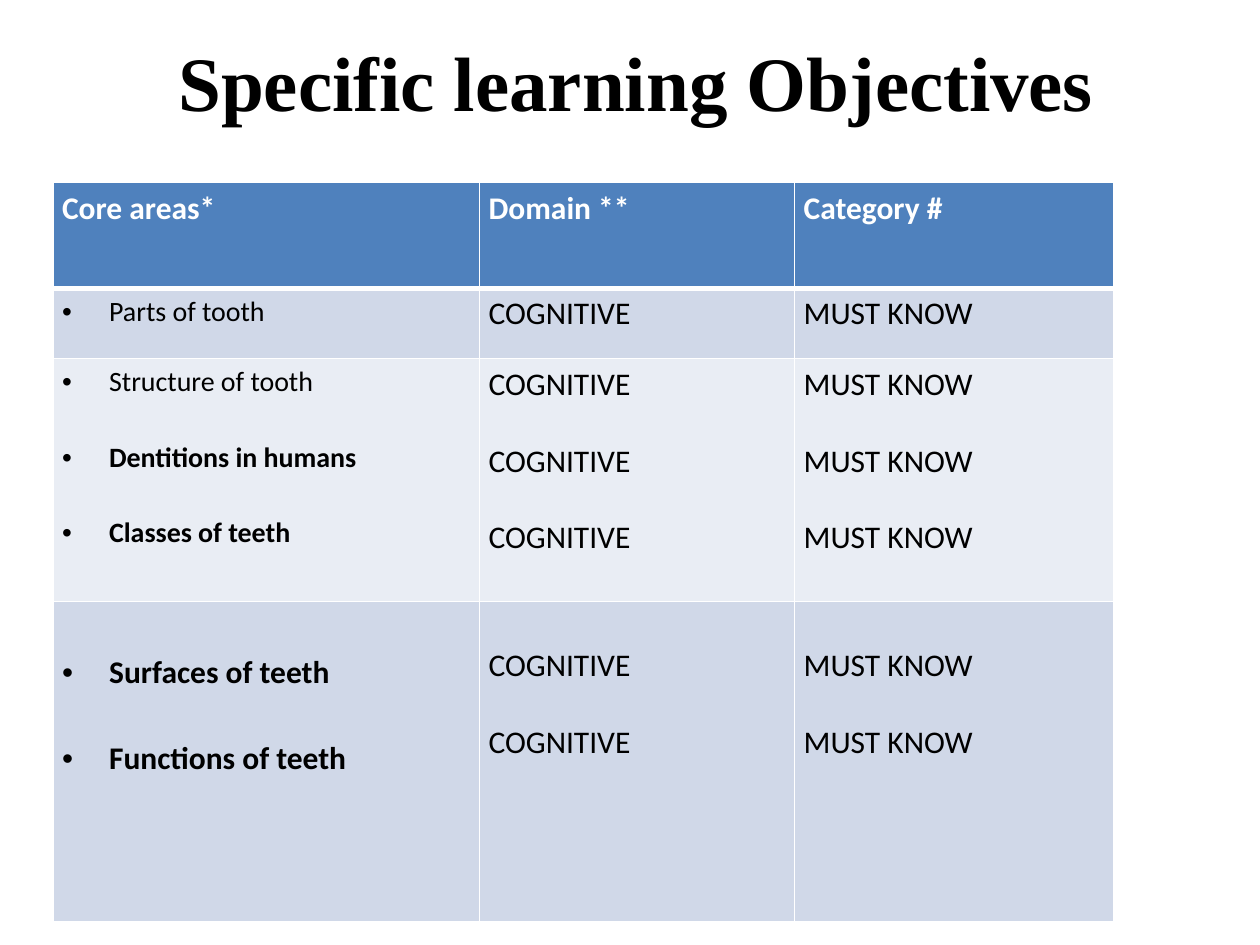
from lxml.etree import SubElement
from pptx import Presentation
from pptx.dml.color import RGBColor
from pptx.enum.text import MSO_ANCHOR as Anchor, PP_ALIGN as Align
from pptx.oxml.ns import qn
from pptx.util import Cm, Pt

COLORS = {"header": "4F81BD", "odd": "D0D8E8", "even": "E9EDF4",
          "white": "FFFFFF", "black": "000000"}


def set_border(cell, side, width):
    """Draw a white line of the given width on side L, R, T or B."""
    line = SubElement(cell._tc.get_or_add_tcPr(), qn(f"a:ln{side}"), w=str(Pt(width)))
    fill = SubElement(line, qn("a:solidFill"))
    SubElement(fill, qn("a:srgbClr"), val=COLORS["white"])


def format_font(font, name, size, bold, color):
    font.name, font.size, font.bold = name, Pt(size), bold
    font.color.rgb = RGBColor.from_string(COLORS[color])


presentation = Presentation()
presentation.slide_width, presentation.slide_height = Cm(25.4), Cm(19.05)
slide = presentation.slides.add_slide(presentation.slide_layouts[6])

# Title
title = slide.shapes.add_textbox(Cm(3.18), Cm(0.1), Cm(19.3), Cm(3.07))
title_frame = title.text_frame
title_frame.word_wrap = True
title_frame.vertical_anchor = Anchor.MIDDLE
title_frame.text = "Specific learning Objectives"
title_paragraph = title_frame.paragraphs[0]
title_paragraph.alignment = Align.CENTER
format_font(title_paragraph.runs[0].font, "Times New Roman", 44, True, "black")

# Objectives: each row groups core areas that share a domain and a category
headers = ["Core areas*", "Domain **", "Category #"]
core_areas = [
    ["Parts of tooth"],
    ["Structure of tooth", "Dentitions in humans", "Classes of teeth"],
    ["Surfaces of teeth", "Functions of teeth"],
]
plain_areas = {"Parts of tooth", "Structure of tooth"}
rows = [[[header] for header in headers]]
for areas in core_areas:
    rows.append([areas, ["COGNITIVE"] * len(areas), ["MUST KNOW"] * len(areas)])

column_widths = [8.6, 6.35, 6.43]
row_heights = [2.13, 1.42, 4.9, 6.45]
row_fills = ["header", "odd", "even", "odd"]
last_row = len(rows) - 1

table = slide.shapes.add_table(len(rows), len(headers), Cm(1.07), Cm(3.68),
                               Cm(sum(column_widths)), Cm(sum(row_heights))).table
for column, width in zip(table.columns, column_widths):
    column.width = Cm(width)

for row_index, (row, height) in enumerate(zip(rows, row_heights)):
    table.rows[row_index].height = Cm(height)
    for column_index, lines in enumerate(row):
        cell = table.cell(row_index, column_index)
        is_header = row_index == 0
        is_area = column_index == 0 and not is_header
        is_last = row_index == last_row

        for side in "LRTB":
            heavy = (row_index, side) in [(0, "B"), (1, "T")]
            set_border(cell, side, 3 if heavy else 1)
        cell.fill.solid()
        cell.fill.fore_color.rgb = RGBColor.from_string(COLORS[row_fills[row_index]])

        cell.margin_left = cell.margin_right = Cm(0.18)
        cell.margin_top = cell.margin_bottom = Cm(0.13)
        if is_last:
            cell.margin_top = Cm(1.04 if is_area else 0.91)

        size = 16 if is_area and not is_last else 18
        gap = 22 if not is_area else 27 if is_last else 23.5
        cell.text_frame.text = "\n".join(lines)
        for index, paragraph in enumerate(cell.text_frame.paragraphs):
            if index:
                paragraph.space_before = Pt(gap)
            if is_area:
                properties = paragraph._p.get_or_add_pPr()
                properties.set("marL", str(Cm(0.95)))
                properties.set("indent", str(-Cm(0.95)))
                SubElement(properties, qn("a:buFont"), typeface="Arial")
                SubElement(properties, qn("a:buChar"), char="•")
            bold = is_header or (is_area and paragraph.text not in plain_areas)
            format_font(paragraph.runs[0].font, "Calibri", size, bold,
                        "white" if is_header else "black")

presentation.save("out.pptx")
